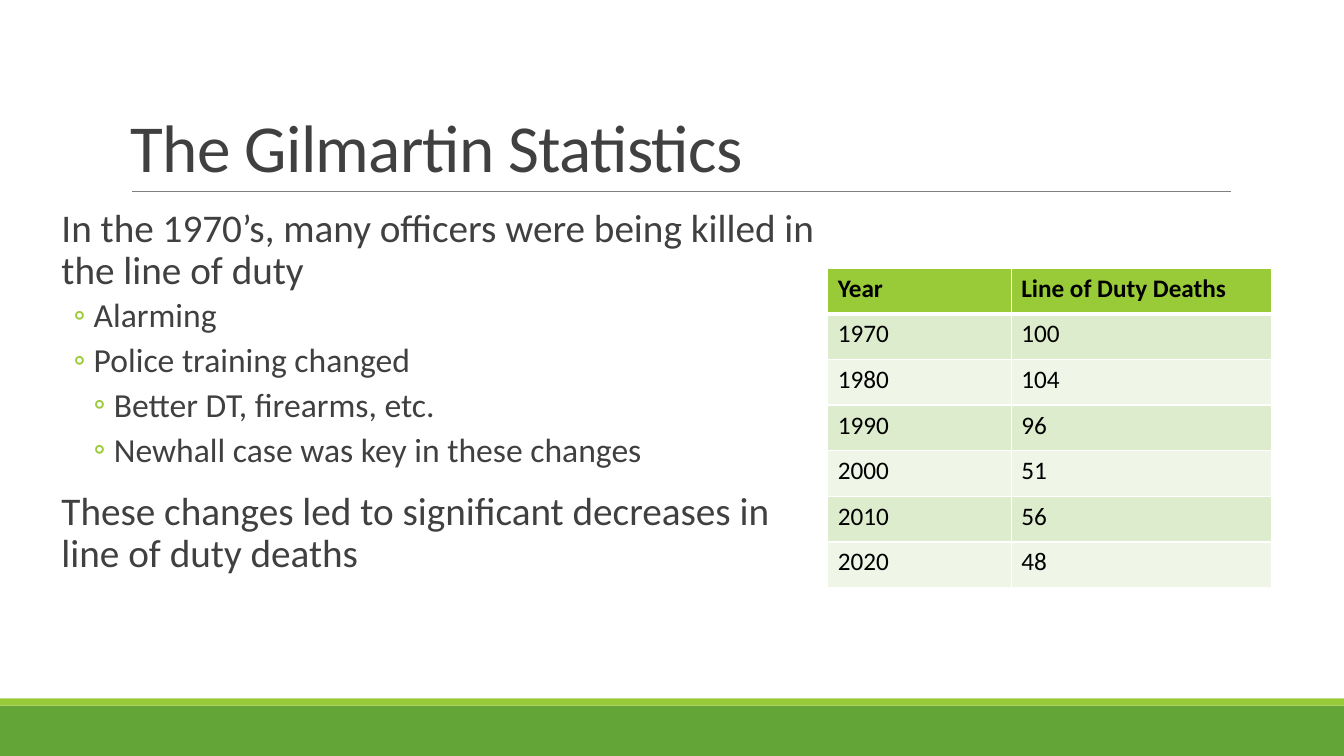
from lxml.etree import SubElement
from pptx import Presentation
from pptx.dml.color import RGBColor
from pptx.enum.shapes import MSO_CONNECTOR, MSO_SHAPE
from pptx.enum.text import MSO_ANCHOR
from pptx.oxml.ns import qn
from pptx.util import Inches, Pt

GREEN, LIME, GRAY = "63A537", "99CB38", "404040"


def rgb(color):
    return RGBColor.from_string(color)


def add_text(tf, text, size, color=GRAY, bold=False, line=1.0, before=0, after=0,
             left=0, hang=0, bullet=None, level=0, spacing=None):
    p = tf.paragraphs[0]
    if p.runs:
        p = tf.add_paragraph()
    p.level = level
    p.line_spacing, p.space_before, p.space_after = line, Pt(before), Pt(after)
    pPr = p._p.get_or_add_pPr()
    pPr.set("marL", str(Inches(left)))
    pPr.set("indent", str(-Inches(hang)))
    if bullet:
        SubElement(SubElement(pPr, qn("a:buClr")), qn("a:srgbClr")).set("val", LIME)
        SubElement(pPr, qn("a:buFont")).set("typeface", "Calibri")
        SubElement(pPr, qn("a:buChar")).set("char", bullet)
    else:
        SubElement(pPr, qn("a:buNone"))
    r = p.add_run()
    r.text = text
    r.font.name, r.font.size, r.font.bold = "Calibri", Pt(size), bold
    r.font.color.rgb = rgb(color)
    if spacing is not None:
        r._r.get_or_add_rPr().set("spc", str(int(spacing * 100)))


prs = Presentation()
prs.slide_width, prs.slide_height = Inches(13.33), Inches(7.5)
s = prs.slides.add_slide(prs.slide_layouts[6])

# Footer bands
for top, height, color in [(7, 0.5, GREEN), (6.93, 0.07, LIME)]:
    sp = s.shapes.add_shape(MSO_SHAPE.RECTANGLE, 0, Inches(top), prs.slide_width, Inches(height))
    sp.shadow.inherit = False
    sp.fill.solid()
    sp.fill.fore_color.rgb = rgb(color)
    sp.line.fill.background()

# Rule under the title
rule = s.shapes.add_connector(MSO_CONNECTOR.STRAIGHT, Inches(1.31), Inches(1.9),
                              Inches(12.21), Inches(1.9))
rule.line.color.rgb = rgb("808080")
rule.line.width = Pt(0.5)
SubElement(rule._element.spPr, qn("a:effectLst"))

# Title
tf = s.shapes.add_textbox(Inches(1.2), Inches(0.31), Inches(11), Inches(1.59)).text_frame
tf.word_wrap = True
tf.vertical_anchor = MSO_ANCHOR.BOTTOM
add_text(tf, "The Gilmartin Statistics", 48, line=0.85, spacing=-0.5)

# Body text
tf = s.shapes.add_textbox(Inches(0.51), Inches(2.02), Inches(7.7), Inches(3.92)).text_frame
tf.word_wrap = True
tf.margin_left = tf.margin_right = 0
body = [
    (0, "In the 1970’s, many officers were being killed in the line of duty"),
    (1, "Alarming"),
    (1, "Police training changed"),
    (2, "Better DT, firearms, etc."),
    (2, "Newhall case was key in these changes"),
    (0, "These changes led to significant decreases in line of duty deaths"),
]
for level, text in body:
    if level:
        add_text(tf, text, 24, line=0.9, before=2, after=4, left=0.22 + 0.2 * level,
                 hang=0.2, bullet="◦", level=level)
    else:
        add_text(tf, text, 28, line=0.9, before=12, after=2, left=0.1)

# Table of deaths by year
rows = [("Year", "Line of Duty Deaths"), ("1970", "100"), ("1980", "104"), ("1990", "96"),
        ("2000", "51"), ("2010", "56"), ("2020", "48")]
table = s.shapes.add_table(len(rows), 2, Inches(8.21), Inches(2.66),
                           Inches(4.4), Inches(3.17)).table
for column, width in zip(table.columns, (1.82, 2.58)):
    column.width = Inches(width)
for i, row in enumerate(rows):
    for j, text in enumerate(row):
        cell = table.cell(i, j)
        tcPr = cell._tc.get_or_add_tcPr()
        for side in ("lnL", "lnR", "lnT", "lnB"):
            under_header = (i, side) in [(0, "lnB"), (1, "lnT")]
            ln = SubElement(tcPr, qn("a:" + side), w=str(Pt(3 if under_header else 1)))
            SubElement(SubElement(ln, qn("a:solidFill")), qn("a:srgbClr")).set("val", "FFFFFF")
        cell.fill.solid()
        cell.fill.fore_color.rgb = rgb(LIME if i == 0 else "DEECCE" if i % 2 else "EFF6E8")
        add_text(cell.text_frame, text, 18, color="000000", bold=i == 0)

prs.save("out.pptx")
